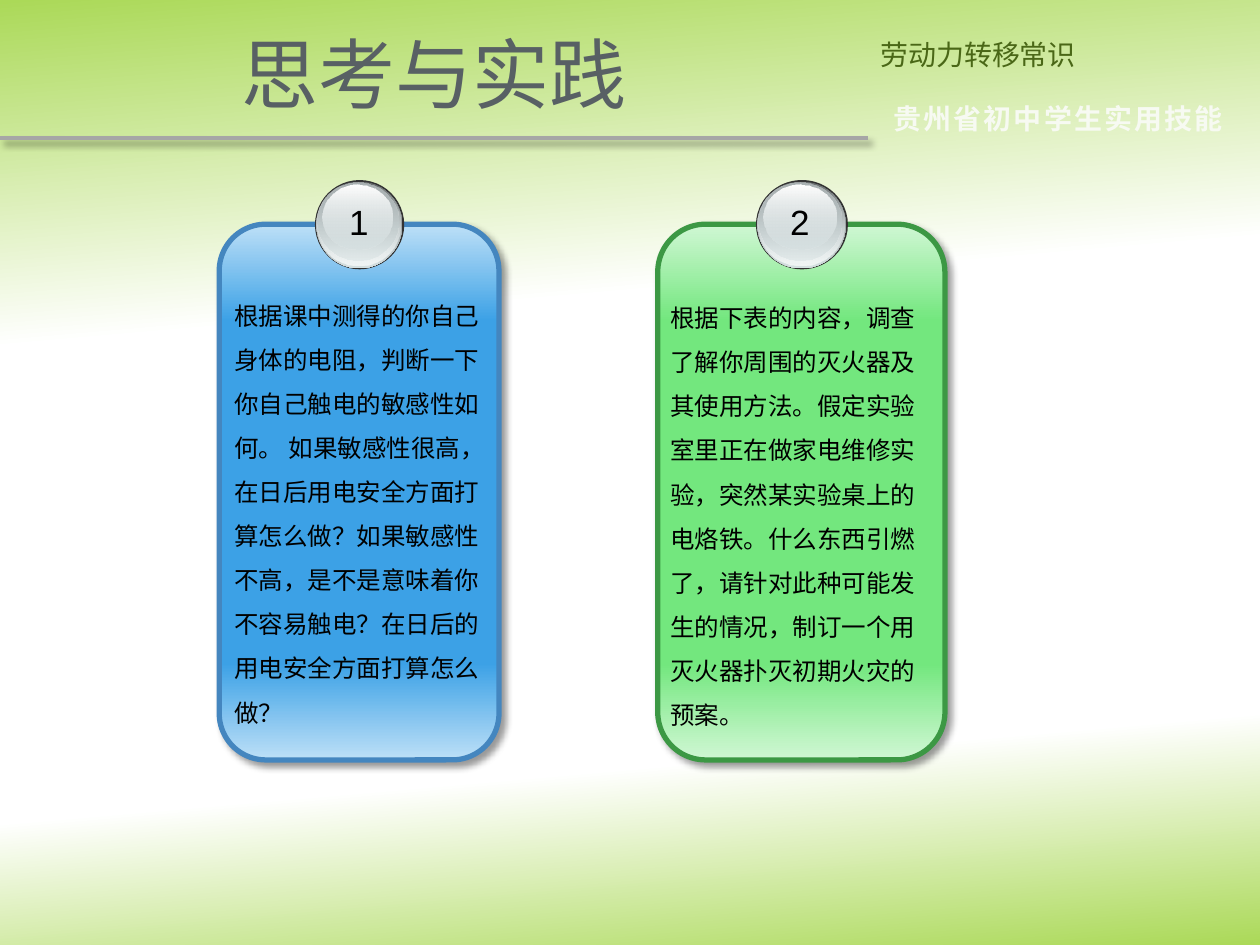
from dataclasses import dataclass

from lxml.etree import SubElement
from pptx import Presentation
from pptx.dml.color import RGBColor
from pptx.enum.shapes import MSO_CONNECTOR, MSO_SHAPE
from pptx.enum.text import MSO_ANCHOR, PP_ALIGN
from pptx.oxml.ns import qn
from pptx.util import Cm, Pt


@dataclass(frozen=True)
class Theme:
    cjk: str = "Noto Sans CJK SC"
    latin: str = "Arial"
    title_size: int = 44
    number_size: int = 20
    heading_size: int = 16
    body_size: int = 14
    title: str = "586064"
    heading: str = "4A6717"
    banner: str = "F7FAF2"
    text: str = "000000"
    rule: str = "A6A6A6"
    rim: str = "333333"
    background: tuple = ((0, "ABD958"), (33, "FFFFFF"), (78, "FFFFFF"), (100, "ABD958"))


THEME = Theme()

# Ball layers in cm: left and top offset, width, height, gradient (position, colour, opacity)
BALL_LAYERS = [
    (0, 0, 1.8, 1.8, None),
    (0.03, 0.03, 1.73, 1.75, [(0, "636869"), (100, "D6E1E2")]),
    (0.03, 0.03, 1.7, 1.7, [(0, "D6E1E2", 0), (100, "F1F5F5")]),
    (0.05, 0.05, 1.63, 1.57, [(0, "AAB2B3"), (100, "D6E1E2", 48)]),
    (0.15, 0.1, 1.42, 1.3, [(0, "FFFFFF"), (100, "D6E1E2", 38)]),
]

CARDS = [
    dict(number="1", left=4.42, width=5.64, ball_left=6.35, ball_scale=1,
         text_left=4.47, text_top=5.64, edge="BDE0F7", middle="3CA1E6", outline="4486BF",
         text="根据课中测得的你自己身体的电阻，判断一下你自己触电的敏感性如何。 如果敏感性很高， "
              "在日后用电安全方面打算怎么做？如果敏感性不高，是不是意味着你不容易触电？"
              "在日后的用电安全方面打算怎么做？"),
    dict(number="2", left=13.26, width=5.79, ball_left=15.24, ball_scale=1.03,
         text_left=13.26, text_top=5.69, edge="D0F7D4", middle="73E77E", outline="3C9844",
         text="根据下表的内容，调查了解你周围的灭火器及其使用方法。假定实验室里正在做家电维修实验，"
              "突然某实验桌上的电烙铁。什么东西引燃了，请针对此种可能发生的情况，"
              "制订一个用灭火器扑灭初期火灾的预案。"),
]


def set_gradient(owner, element, stops, angle=90):
    """Fill a shape or background with any number of colour stops."""
    owner.fill.gradient()
    gradient = element.find(".//" + qn("a:gradFill"))
    stop_list = gradient.find(qn("a:gsLst"))
    for stop in list(stop_list):
        stop_list.remove(stop)
    for position, colour, *opacity in stops:
        stop = SubElement(stop_list, qn("a:gs"), pos=str(position * 1000))
        tone = SubElement(stop, qn("a:srgbClr"), val=colour)
        if opacity:
            SubElement(tone, qn("a:alpha"), val=str(opacity[0] * 1000))
    gradient.find(qn("a:lin")).set("ang", str(angle * 60000))


def add_shadow(shape):
    properties = shape._element.spPr
    for effects in properties.findall(qn("a:effectLst")):
        properties.remove(effects)
    effects = SubElement(properties, qn("a:effectLst"))
    shadow = SubElement(effects, qn("a:outerShdw"), blurRad=str(Pt(4)), dist=str(Pt(3)),
                        dir=str(45 * 60000), algn="tl", rotWithShape="0")
    tone = SubElement(shadow, qn("a:srgbClr"), val="000000")
    SubElement(tone, qn("a:alpha"), val="40000")


def write_text(frame, text, *, size, colour, font=THEME.cjk, align=PP_ALIGN.LEFT,
               bold=False, wrap=True, line_spacing=None, tracking=0):
    frame.word_wrap = wrap
    para = frame.paragraphs[0]
    para.alignment = align
    if line_spacing:
        para.line_spacing = line_spacing
    span = para.add_run()
    span.text = text
    span.font.size = Pt(size)
    span.font.bold = bold
    span.font.name = font
    span.font.color.rgb = RGBColor.from_string(colour)
    properties = span._r.get_or_add_rPr()
    properties.set("spc", str(round(tracking * 100)))
    SubElement(properties, qn("a:ea"), typeface=font)


def add_text(shapes, text, left, top, width, height, **text_format):
    box = shapes.add_textbox(Cm(left), Cm(top), Cm(width), Cm(height))
    write_text(box.text_frame, text, **text_format)


def add_ball(shapes, number, left, scale):
    """Stack the glassy layers and put the number on top."""
    top = 3.63
    for offset_x, offset_y, width, height, stops in BALL_LAYERS:
        layer = shapes.add_shape(MSO_SHAPE.OVAL, Cm(left + offset_x), Cm(top + offset_y),
                                 Cm(width * scale), Cm(height))
        layer.line.fill.background()
        layer.shadow.inherit = False
        if stops:
            set_gradient(layer, layer._element, stops)
        else:
            layer.fill.solid()
            layer.fill.fore_color.rgb = RGBColor.from_string(THEME.rim)
    add_text(shapes, number, left + 0.26, top + 0.28, 1.25, 1.5, size=THEME.number_size,
             colour=THEME.text, font=THEME.latin, align=PP_ALIGN.CENTER, wrap=False)


def add_card(page, *, number, left, width, ball_left, ball_scale, text_left, text_top,
             edge, middle, outline, text):
    shapes = page.shapes.add_group_shape().shapes
    panel = shapes.add_shape(MSO_SHAPE.ROUNDED_RECTANGLE, Cm(left), Cm(4.52),
                             Cm(width), Cm(10.8))
    set_gradient(panel, panel._element, [(0, edge), (18, middle), (82, middle), (100, edge)])
    panel.line.color.rgb = RGBColor.from_string(outline)
    panel.line.width = Pt(3)
    add_shadow(panel)
    add_text(shapes, text, text_left, text_top, width, 9.2, size=THEME.body_size,
             colour=THEME.text, line_spacing=1.5)
    add_ball(shapes, number, ball_left, ball_scale)


def add_header(page):
    # Title
    title = page.shapes.title
    title.left, title.top, title.width, title.height = Cm(0), Cm(0.18), Cm(17.5), Cm(2.59)
    title.text_frame.vertical_anchor = MSO_ANCHOR.MIDDLE
    write_text(title.text_frame, "思考与实践", size=THEME.title_size, colour=THEME.title,
               align=PP_ALIGN.CENTER)

    # Rule below the title
    rule = page.shapes.add_connector(MSO_CONNECTOR.STRAIGHT, Cm(0), Cm(2.79), Cm(17.5), Cm(2.79))
    rule.line.color.rgb = RGBColor.from_string(THEME.rule)
    rule.line.width = Pt(2.25)
    add_shadow(rule)

    # Course name and series name
    add_text(page.shapes, "劳动力转移常识", 17.5, 0.64, 7.9, 0.94, size=THEME.heading_size,
             colour=THEME.heading, align=PP_ALIGN.JUSTIFY)
    add_text(page.shapes, "贵州省初中学生实用技能", 17.76, 1.93, 7.4, 0.94,
             size=THEME.heading_size, colour=THEME.banner, bold=True, wrap=False, tracking=1.3)


def main():
    deck = Presentation()
    deck.slide_width, deck.slide_height = Cm(25.4), Cm(19.05)
    page = deck.slides.add_slide(deck.slide_layouts[5])
    set_gradient(page.background, page._element, THEME.background, angle=85)
    add_header(page)
    for card in CARDS:
        add_card(page, **card)
    deck.save("out.pptx")


if __name__ == "__main__":
    main()
